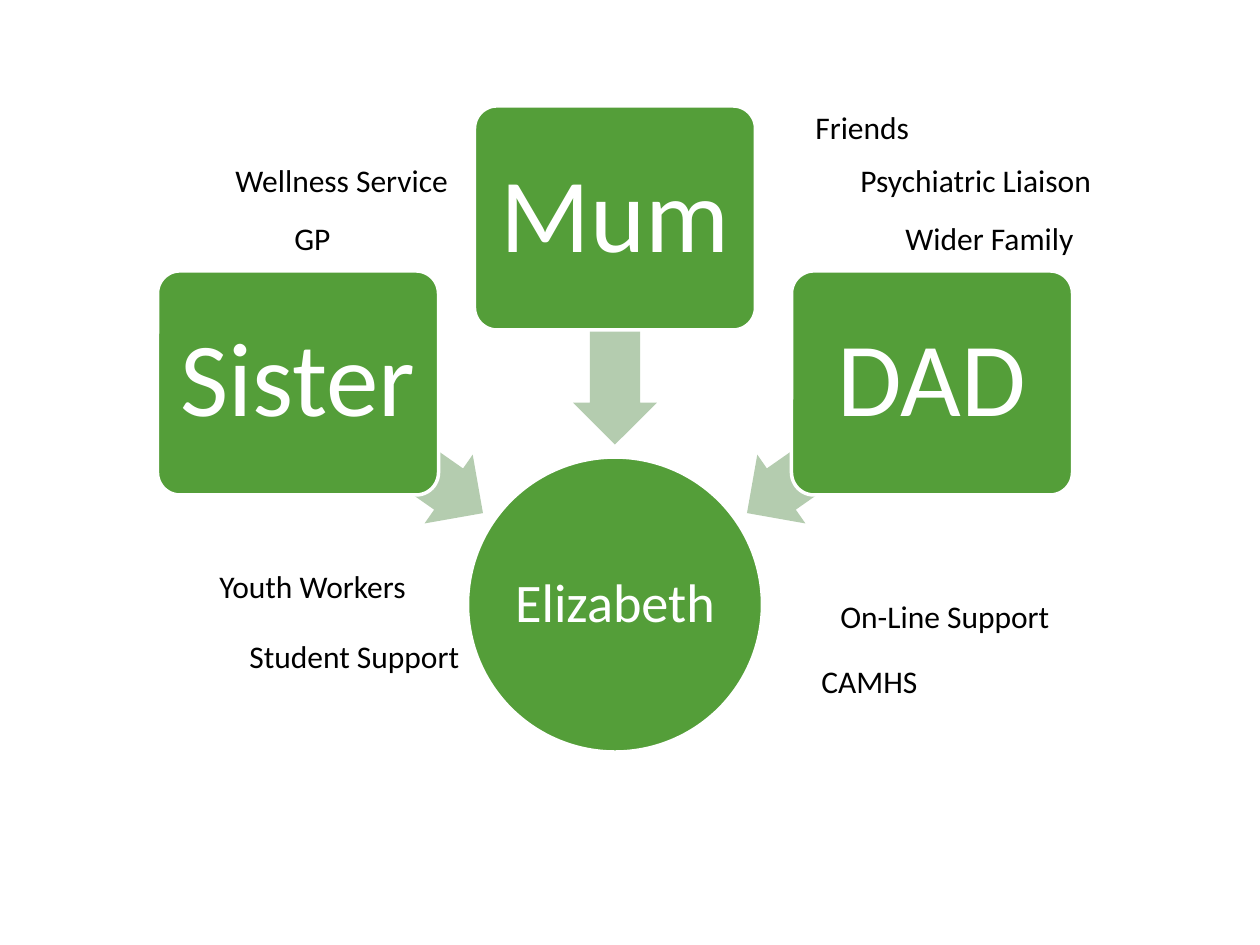
from typing import NamedTuple

from pptx import Presentation
from pptx.dml.color import RGBColor
from pptx.enum.shapes import MSO_SHAPE
from pptx.enum.text import MSO_ANCHOR, MSO_AUTO_SIZE, PP_ALIGN
from pptx.util import Emu, Pt

ELLIPSE = MSO_SHAPE.OVAL
ROUNDED = MSO_SHAPE.ROUNDED_RECTANGLE
LEFT_ARROW = MSO_SHAPE.LEFT_ARROW
MIDDLE = MSO_ANCHOR.MIDDLE
CENTER = PP_ALIGN.CENTER
LEFT = PP_ALIGN.LEFT
GROW = MSO_AUTO_SIZE.SHAPE_TO_FIT_TEXT

GREEN = RGBColor(0x54, 0x9E, 0x39)
PALE_GREEN = RGBColor(0xB4, 0xCC, 0xAF)
WHITE = RGBColor(0xFF, 0xFF, 0xFF)
BLACK = RGBColor(0x00, 0x00, 0x00)

FONT = "Calibri"
PIXELS_PER_INCH = 126
SLIDE_WIDTH, SLIDE_HEIGHT = 1260, 945
CENTER_X = 615
CIRCLE_TOP, CIRCLE_SIZE = 457, 295
CARD_WIDTH, CARD_HEIGHT, CARD_STEP = 281, 224, 317
ARROW_WIDTH, ARROW_HEIGHT, ARROW_STEP = 227, 84, 225
LABEL_HEIGHT = 50


class Relative(NamedTuple):
    name: str
    column: int
    card_top: int
    arrow_top: int
    arrow_rotation: int


class Label(NamedTuple):
    text: str
    left: int
    top: int
    width: int


RELATIVES = [
    Relative("Sister", -1, 271, 406, 215),
    Relative("Mum", 0, 106, 289, 270),
    Relative("DAD", 1, 271, 406, 325),
]

LABELS = [
    Label("Wellness Service", 223, 155, 241),
    Label("Student Support", 237, 631, 238),
    Label("CAMHS", 809, 656, 122),
    Label("Youth Workers", 207, 561, 214),
    Label("GP", 282, 213, 62),
    Label("On-Line Support", 828, 591, 237),
    Label("Psychiatric Liaison", 848, 155, 258),
    Label("Wider Family", 893, 213, 195),
    Label("Friends", 803, 102, 120),
]


def px(length: int) -> Emu:
    return Emu(round(length * 914400 / PIXELS_PER_INCH))


def write_text(shape, text: str, *, size: int, color: RGBColor,
               align=LEFT, line_spacing: float = 1.0) -> None:
    paragraph = shape.text_frame.paragraphs[0]
    paragraph.alignment = align
    paragraph.line_spacing = line_spacing
    run = paragraph.add_run()
    run.text = text
    run.font.name = FONT
    run.font.size = Pt(size)
    run.font.color.rgb = color


def add_centered_shape(slide, kind, center: int, top: int, width: int,
                       height: int, color: RGBColor):
    shape = slide.shapes.add_shape(
        kind, px(center) - px(width) // 2, px(top), px(width), px(height))
    shape.shadow.inherit = False
    shape.fill.solid()
    shape.fill.fore_color.rgb = color
    shape.line.fill.background()
    return shape


def add_person(slide, kind, name: str, center: int, top: int, width: int,
               height: int, *, size: int, inset: int):
    shape = add_centered_shape(slide, kind, center, top, width, height, GREEN)
    shape.line.color.rgb = WHITE
    shape.line.width = Pt(2)
    frame = shape.text_frame
    frame.word_wrap = True
    frame.vertical_anchor = MIDDLE
    frame.margin_left = frame.margin_right = px(inset)
    frame.margin_top = frame.margin_bottom = px(inset)
    write_text(shape, name, size=size, color=WHITE, align=CENTER,
               line_spacing=0.9)
    return shape


def add_relative(slide, relative: Relative) -> None:
    arrow = add_centered_shape(
        slide, LEFT_ARROW, CENTER_X + relative.column * ARROW_STEP,
        relative.arrow_top, ARROW_WIDTH, ARROW_HEIGHT, PALE_GREEN)
    arrow.adjustments[0] = 0.6
    arrow.adjustments[1] = 0.5
    arrow.rotation = relative.arrow_rotation
    card = add_person(
        slide, ROUNDED, relative.name, CENTER_X + relative.column * CARD_STEP,
        relative.card_top, CARD_WIDTH, CARD_HEIGHT, size=60, inset=15)
    card.adjustments[0] = 0.1


def add_label(slide, label: Label) -> None:
    box = slide.shapes.add_textbox(
        px(label.left), px(label.top), px(label.width), px(LABEL_HEIGHT))
    box.text_frame.word_wrap = False
    box.text_frame.auto_size = GROW
    write_text(box, label.text, size=18, color=BLACK)


def main() -> None:
    presentation = Presentation()
    presentation.slide_width = px(SLIDE_WIDTH)
    presentation.slide_height = px(SLIDE_HEIGHT)
    slide = presentation.slides.add_slide(presentation.slide_layouts[6])
    add_person(slide, ELLIPSE, "Elizabeth", CENTER_X, CIRCLE_TOP,
               CIRCLE_SIZE, CIRCLE_SIZE, size=31, inset=2)
    for relative in RELATIVES:
        add_relative(slide, relative)
    for label in LABELS:
        add_label(slide, label)
    presentation.save("out.pptx")


if __name__ == "__main__":
    main()
